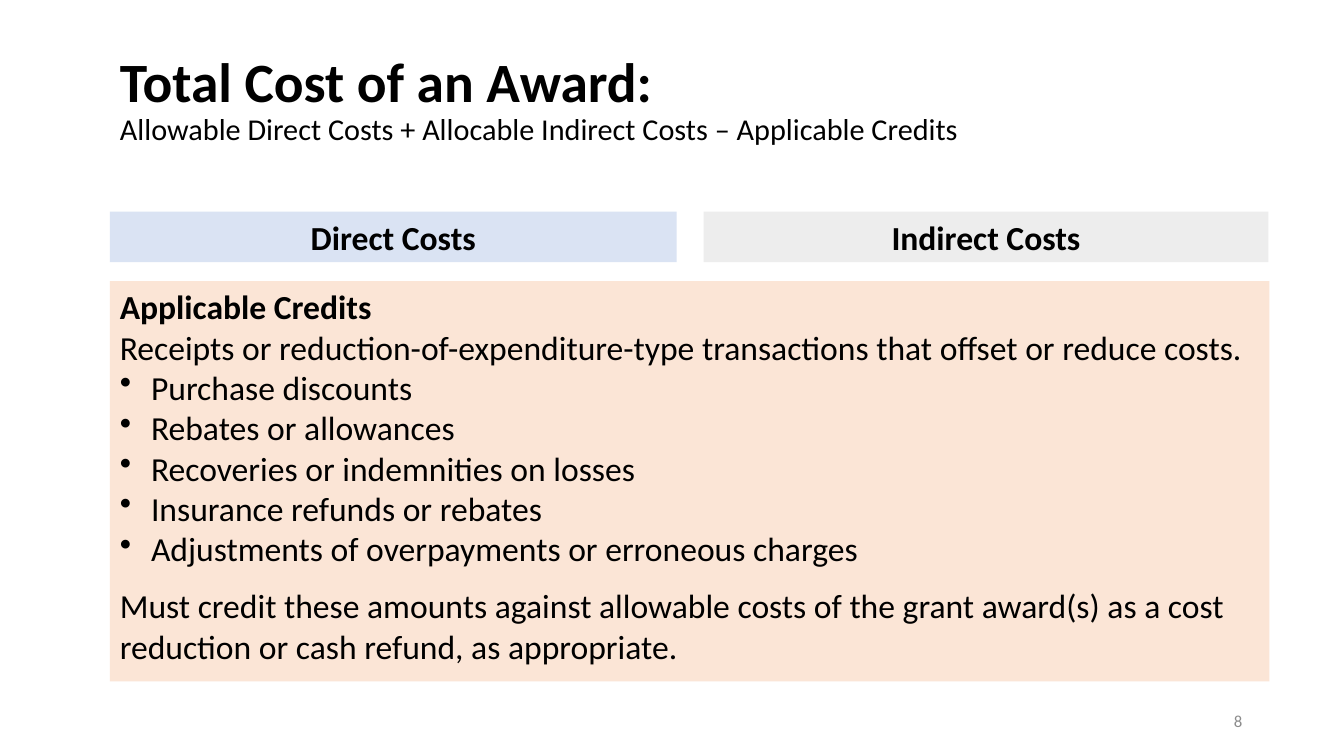
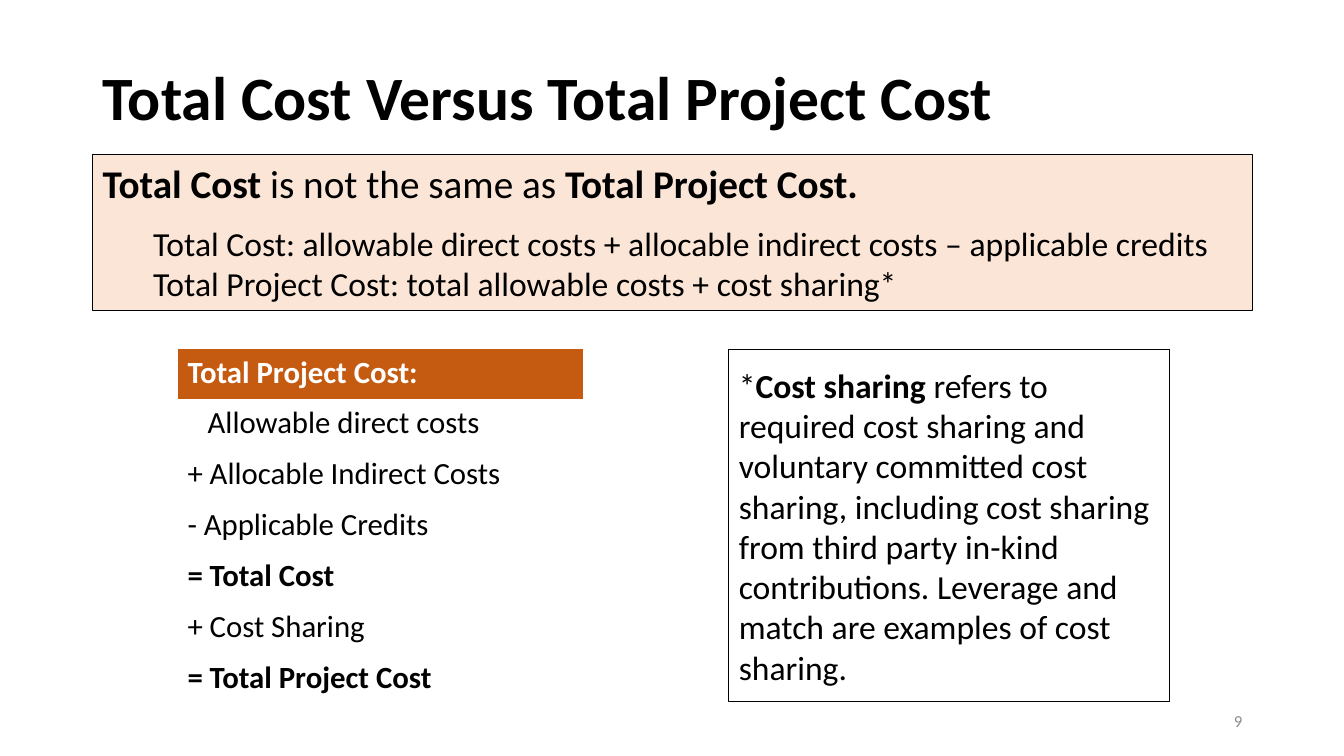
from pptx import Presentation
from pptx.dml.color import RGBColor
from pptx.enum import shapes, text
from pptx.oxml import parse_xml
from pptx.oxml.ns import nsdecls
from pptx.util import Inches, Pt

FONT = "Calibri"
BLACK = RGBColor(0x00, 0x00, 0x00)
WHITE = RGBColor(0xFF, 0xFF, 0xFF)
GREY = RGBColor(0x8C, 0x8C, 0x8C)
PALE_BLUE = RGBColor(0xDA, 0xE3, 0xF3)
PALE_GREY = RGBColor(0xED, 0xED, 0xED)
PEACH = RGBColor(0xFB, 0xE5, 0xD6)
ORANGE = RGBColor(0xC5, 0x5A, 0x11)
LEFT, CENTER, RIGHT = (text.PP_ALIGN.LEFT, text.PP_ALIGN.CENTER,
                       text.PP_ALIGN.RIGHT)
TOP, MIDDLE = text.MSO_ANCHOR.TOP, text.MSO_ANCHOR.MIDDLE


def write(para, spans, color=BLACK, indent=0, bullet=False, **formats):
    """Fill a paragraph with (words, size, bold) spans; a newline breaks."""
    for name, value in {"alignment": LEFT, **formats}.items():
        setattr(para, name, value)
    for words, size, bold in spans:
        span = para.add_run()
        span.text = words.rstrip("\n")
        look = {"name": FONT, "size": Pt(size), "bold": bold}
        for name, value in look.items():
            setattr(span.font, name, value)
        span.font.color.rgb = color
        if words.endswith("\n"):
            para.add_line_break()
    properties = para._p.get_or_add_pPr()
    if indent:
        properties.set("marL", str(Inches(indent)))
    if bullet:
        properties.set("indent", str(-Inches(indent)))
        properties.append(parse_xml(f'<a:buChar {nsdecls("a")} char="•"/>'))


def add_box(page, place, paragraphs, fill=None, line=None, anchor=TOP):
    """Add a rectangle holding (spans, formats) paragraphs."""
    box = page.shapes.add_shape(shapes.MSO_SHAPE.RECTANGLE,
                                *[Inches(length) for length in place])
    box.shadow.inherit = False
    if fill is None:
        box.fill.background()
    else:
        box.fill.solid()
        box.fill.fore_color.rgb = fill
    if line is None:
        box.line.fill.background()
    else:
        box.line.color.rgb = line
        box.line.width = Pt(0.75)
    frame = box.text_frame
    frame.word_wrap = True
    frame.vertical_anchor = anchor
    for index, (spans, formats) in enumerate(paragraphs):
        para = frame.add_paragraph() if index else frame.paragraphs[0]
        write(para, spans, **formats)


deck = Presentation()
deck.slide_width, deck.slide_height = Inches(13.33), Inches(7.5)

# Titles and page numbers
headings = [
    (8, 1.09, 11.5, [
        ("Total Cost of an Award:\n", 39.6, True),
        ("Allowable Direct Costs + Allocable Indirect Costs – "
         "Applicable Credits", 21.6, False)]),
    (9, 0.92, 11.67, [("Total Cost Versus Total Project Cost", 44, True)]),
]
pages = []
for number, left, width, spans in headings:
    page = deck.slides.add_slide(deck.slide_layouts[5])
    title = page.shapes.title
    title.left, title.top = Inches(left), Inches(0.5)
    title.width, title.height = Inches(width), Inches(1)
    title.text_frame.auto_size = text.MSO_AUTO_SIZE.NONE
    title.text_frame.vertical_anchor = MIDDLE
    write(title.text_frame.paragraphs[0], spans, line_spacing=0.9)

    footer = page.shapes.add_textbox(Inches(9.42), Inches(6.95),
                                     Inches(3), Inches(0.4))
    footer.text_frame.word_wrap = True
    footer.text_frame.vertical_anchor = MIDDLE
    write(footer.text_frame.paragraphs[0], [(str(number), 12, False)],
          color=GREY, alignment=RIGHT)
    pages.append(page)
award, versus = pages

# Award: cost headings
for label, left, width, fill in [("Direct Costs", 1.09, 5.62, PALE_BLUE),
                                 ("Indirect Costs", 6.98, 5.6, PALE_GREY)]:
    add_box(award, (left, 2.1, width, 0.5),
            [([(label, 24, True)], {"alignment": CENTER})], fill)

# Award: applicable credits
credit_kinds = ["Purchase discounts", "Rebates or allowances",
                "Recoveries or indemnities on losses",
                "Insurance refunds or rebates",
                "Adjustments of overpayments or erroneous charges"]
credits = [
    ([("Applicable Credits", 24, True)], {}),
    ([("Receipts or reduction-of-expenditure-type transactions that offset "
       "or reduce costs.", 24, False)], {}),
]
for kind in credit_kinds:
    credits.append(([(kind, 24, False)], {"indent": 0.31, "bullet": True}))
credits.append((
    [("Must credit these amounts against allowable costs of the grant "
      "award(s) as a cost reduction or cash refund, as appropriate.",
      24, False)], {"space_before": Pt(12)}))
add_box(award, (1.09, 2.79, 11.5, 3.97), credits, PEACH)

# Versus: the two definitions
add_box(versus, (0.92, 1.53, 11.5, 1.55), [
    ([("Total Cost", 28, True), (" is not the same as ", 28, False),
      ("Total Project Cost.", 28, True)], {"space_after": Pt(12)}),
    ([("Total Cost: allowable direct costs + allocable indirect costs – "
       "applicable credits Total Project Cost: total allowable costs + "
       "cost sharing*", 24, False)], {"indent": 0.5}),
], PEACH, BLACK)

# Versus: how the total is built up
steps = ["Total Project Cost:", "Allowable direct costs",
         "+ Allocable Indirect Costs", "- Applicable Credits",
         "= Total Cost", "+ Cost Sharing", "= Total Project Cost"]
table = versus.shapes.add_table(len(steps), 1, Inches(1.76), Inches(3.46),
                                Inches(4.03), Inches(3.54)).table
table.horz_banding = False
for index, step in enumerate(steps):
    header = index == 0
    cell = table.cell(index, 0)
    cell.fill.solid()
    cell.fill.fore_color.rgb = ORANGE if header else WHITE
    write(cell.text_frame.paragraphs[0],
          [(step, 22, header or step.startswith("="))],
          color=WHITE if header else BLACK,
          indent=0.2 if step.startswith("Allowable") else 0)

# Versus: note on cost sharing
add_box(versus, (7.23, 3.47, 4.37, 3.49), [
    ([("*", 24, False), ("Cost sharing", 24, True),
      (" refers to required cost sharing and voluntary committed cost "
       "sharing, including cost sharing from third party in-kind "
       "contributions. Leverage and match are examples of cost sharing.",
       24, False)], {}),
], line=BLACK, anchor=MIDDLE)

deck.save("out.pptx")
